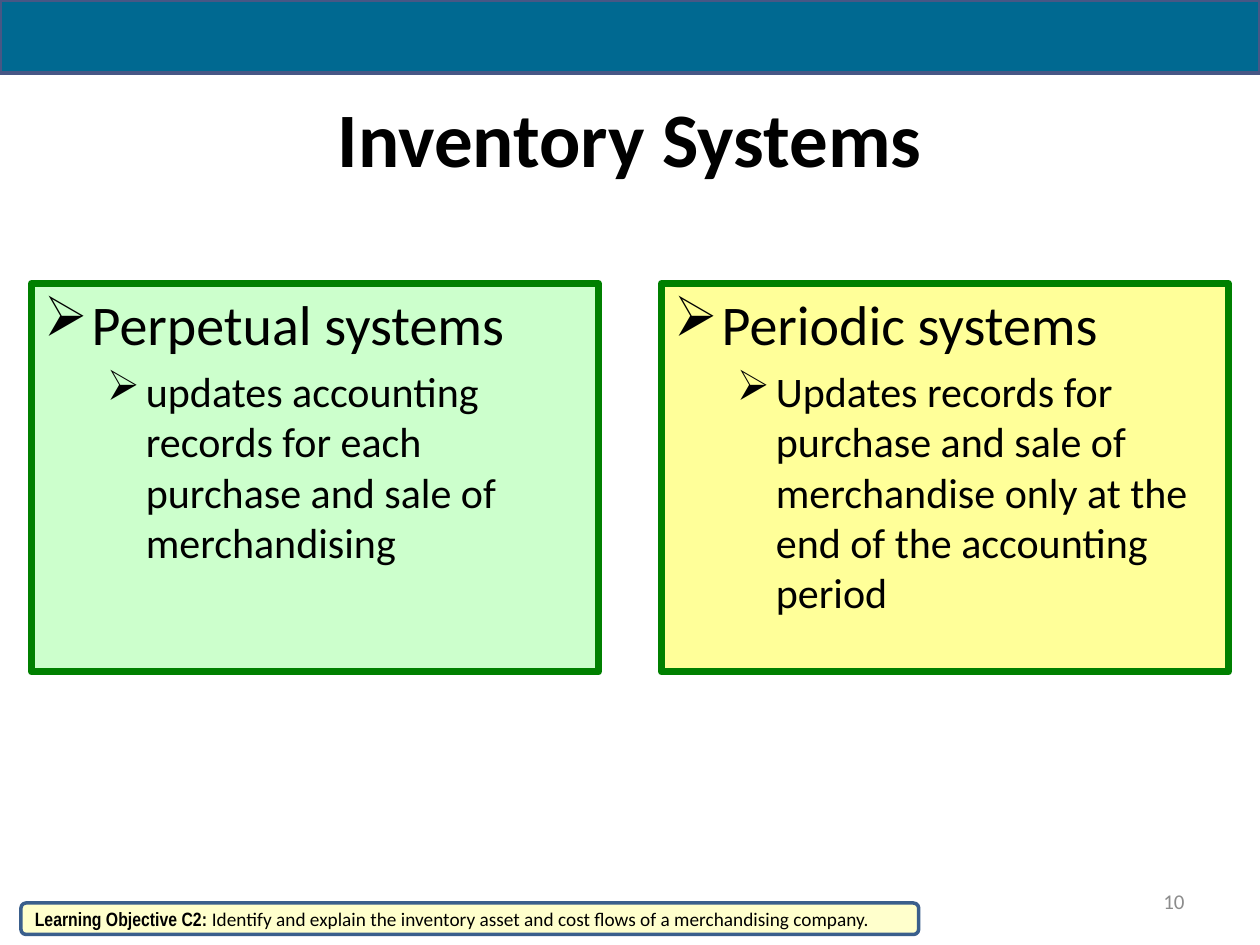
from lxml import etree
from pptx import Presentation
from pptx.dml.color import RGBColor
from pptx.enum.shapes import MSO_SHAPE
from pptx.enum.text import MSO_ANCHOR, PP_ALIGN
from pptx.oxml.ns import qn
from pptx.util import Inches, Pt

RECT, ROUNDED = MSO_SHAPE.RECTANGLE, MSO_SHAPE.ROUNDED_RECTANGLE
TOP, MIDDLE = MSO_ANCHOR.TOP, MSO_ANCHOR.MIDDLE
LEFT, CENTER, RIGHT = PP_ALIGN.LEFT, PP_ALIGN.CENTER, PP_ALIGN.RIGHT

COLUMNS, ROWS = 120, 90  # grid cells of a twelfth of an inch


def color(hex_string):
    return RGBColor.from_string(hex_string)


class SlideBuilder:
    body_font = "Calibri"
    label_font = "Arial Narrow"
    ink = "000000"
    # Per outline level: text size, left margin and hanging indent in inches
    levels = [(32, 0.38, 0.38), (24, 0.81, 0.31)]

    def __init__(self, deck):
        self.page = deck.slides.add_slide(deck.slide_layouts[6])
        self.cell_width = deck.slide_width / COLUMNS
        self.cell_height = deck.slide_height / ROWS

    def place(self, left, top, width, height):
        return (round(left * self.cell_width), round(top * self.cell_height),
                round(width * self.cell_width), round(height * self.cell_height))

    def panel(self, area, fill, line, line_width, kind=RECT, anchor=MIDDLE):
        box = self.page.shapes.add_shape(kind, *self.place(*area))
        box.shadow.inherit = False
        box.fill.solid()
        box.fill.fore_color.rgb = color(fill)
        box.line.color.rgb = color(line)
        box.line.width = Pt(line_width)
        box.text_frame.word_wrap = True
        box.text_frame.vertical_anchor = anchor
        return box

    def style(self, font, size, ink=ink, bold=False, name=body_font):
        font.name, font.size, font.bold = name, Pt(size), bold
        font.color.rgb = color(ink)

    def text(self, area, words, size, align, ink=ink, bold=False):
        frame = self.page.shapes.add_textbox(*self.place(*area)).text_frame
        frame.word_wrap = True
        frame.vertical_anchor = MIDDLE
        para = frame.paragraphs[0]
        para.text = words
        para.alignment = align
        self.style(para.font, size, ink, bold)

    def bullet_panel(self, area, fill, lines):
        frame = self.panel(area, fill, "008000", 4, anchor=TOP).text_frame
        for level, words in enumerate(lines):
            size, margin, hanging = self.levels[level]
            para = frame.add_paragraph() if level else frame.paragraphs[0]
            para.text = words
            para.level = level
            para.alignment = LEFT
            para.space_before = Pt(0.2 * size if level else 0)
            properties = para._p.get_or_add_pPr()
            properties.set("marL", str(Inches(margin)))
            properties.set("indent", str(-Inches(hanging)))
            etree.SubElement(properties, qn("a:buChar")).set("char", "➢")
            self.style(para.font, size)

    def objective(self, area, label, words):
        box = self.panel(area, "FFFFCC", "3A5F8C", 2, ROUNDED)
        para = box.text_frame.paragraphs[0]
        para.alignment = LEFT
        for content, name, bold in ((label, self.label_font, True),
                                    (words, self.body_font, False)):
            span = para.add_run()
            span.text = content
            self.style(span.font, 11, bold=bold, name=name)


def main():
    deck = Presentation()
    deck.slide_width, deck.slide_height = Inches(10), Inches(7.5)
    slide = SlideBuilder(deck)

    # Two systems side by side, one in each half of the slide
    systems = [
        ("CCFFCC", ["Perpetual systems",
                    "updates accounting records for each purchase and sale "
                    "of merchandising"]),
        ("FFFF99", ["Periodic systems",
                    "Updates records for purchase and sale of merchandise "
                    "only at the end of the accounting period"]),
    ]
    half, margin = COLUMNS / 2, 3
    for index, (fill, lines) in enumerate(systems):
        area = (index * half + margin, 27, half - 2 * margin, 37)
        slide.bullet_panel(area, fill, lines)

    # Title and top band
    slide.text((6, 5, COLUMNS - 12, 16), "Inventory Systems", 44, CENTER, bold=True)
    slide.panel((0, 0, COLUMNS, 7), "006991", "475785", 2.25)

    # Footer: page number and learning objective
    slide.text((86, 83.4, 28, 4.8), "10", 12, RIGHT, ink="8C8C8C")
    slide.objective((2, 86, 85.5, 3), "Learning Objective C2: ",
                    "Identify and explain the inventory asset and cost flows "
                    "of a merchandising company.")

    deck.save("out.pptx")


if __name__ == "__main__":
    main()
